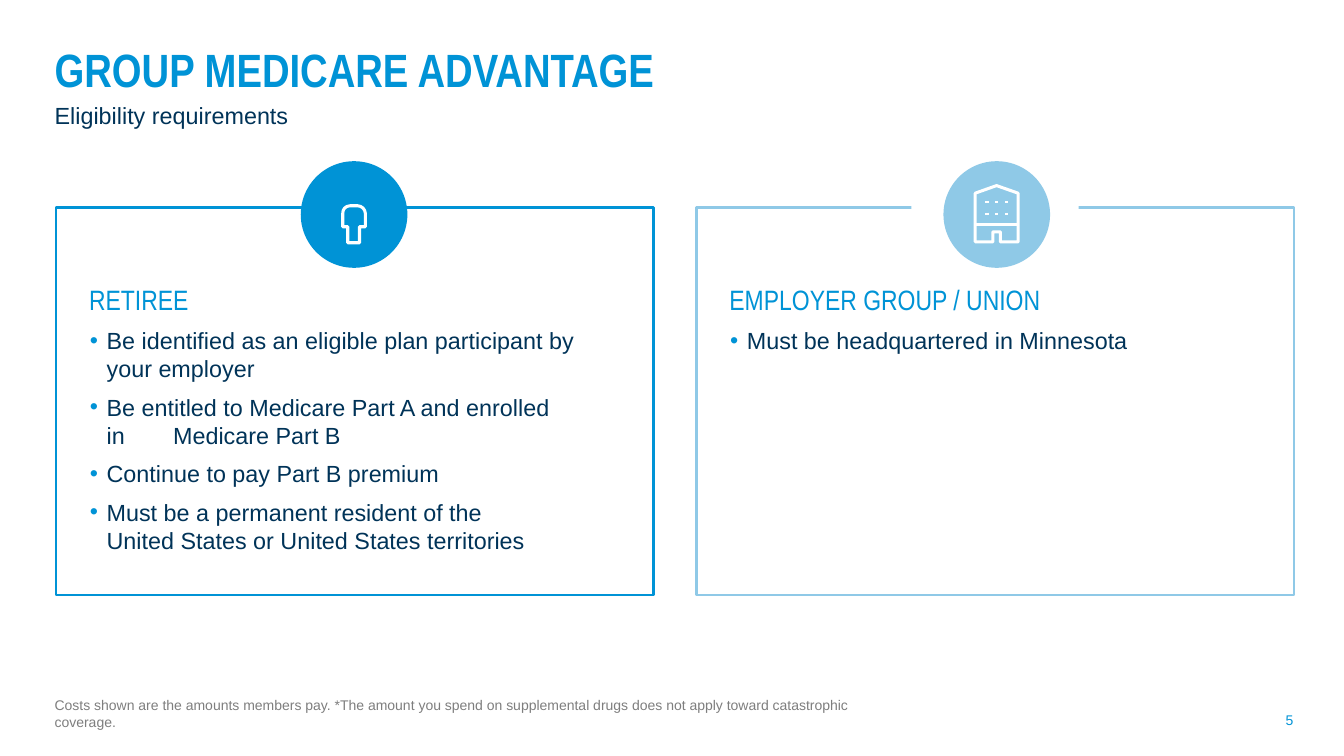
from pptx import Presentation
from pptx.dml.color import RGBColor
from pptx.enum.shapes import MSO_CONNECTOR, MSO_SHAPE
from pptx.enum.text import MSO_ANCHOR, MSO_AUTO_SIZE, PP_ALIGN
from pptx.oxml import parse_xml
from pptx.oxml.ns import nsdecls
from pptx.util import Pt

BLUE, LIGHT, NAVY, GREY, WHITE = "0093D6", "8FC9E7", "003358", "7E7E7E", "FFFFFF"

prs = Presentation()
prs.slide_width, prs.slide_height = Pt(1152), Pt(648)
s = prs.slides.add_slide(prs.slide_layouts[5])


def paint(sp, fill=None, line=None, width=2):
    """Set fill and outline, with none where no colour is given."""
    sp.shadow.inherit = False
    for part, color in ((sp.fill, fill), (sp.line.fill, line)):
        if color:
            part.solid()
            part.fore_color.rgb = RGBColor.from_string(color)
        else:
            part.background()
    if line:
        sp.line.width = Pt(width)


def write(sp, inset, lines):
    """Fill a shape with (text, font, size, colour, space before, bulleted) lines."""
    tf = sp.text_frame
    tf.word_wrap = True
    tf.auto_size = MSO_AUTO_SIZE.NONE
    tf.vertical_anchor = MSO_ANCHOR.TOP
    tf.margin_left = tf.margin_right = tf.margin_bottom = 0
    tf.margin_top = Pt(inset)
    for i, (text, font, size, color, before, bulleted) in enumerate(lines):
        p = tf.add_paragraph() if i else tf.paragraphs[0]
        p.text = text
        p.alignment = PP_ALIGN.LEFT
        p.space_before = Pt(before)
        if bulleted:
            pPr = p._p.get_or_add_pPr()
            pPr.set("marL", str(Pt(15)))
            pPr.set("indent", str(-Pt(14.4)))
            for xml in (
                f'<a:buClr {nsdecls("a")}><a:srgbClr val="{BLUE}"/></a:buClr>',
                f'<a:buFont {nsdecls("a")} typeface="Arial"/>',
                f'<a:buChar {nsdecls("a")} char="•"/>',
                f'<a:tabLst {nsdecls("a")}><a:tab pos="{Pt(72)}" algn="l"/></a:tabLst>',
            ):
                pPr.append(parse_xml(xml))
        for r in p.runs:
            r.font.name, r.font.size = font, Pt(size)
            r.font.color.rgb = RGBColor.from_string(color)


# Title and subtitle
title = s.shapes.title
title.left, title.top, title.width, title.height = Pt(46.8), Pt(27.4), Pt(1064), Pt(85)
write(title, 8, [
    ("GROUP MEDICARE ADVANTAGE", "Arial Narrow", 40, BLUE, 0, False),
    ("Eligibility requirements", "Arial", 20, NAVY, 3.7, False),
])
title.text_frame.paragraphs[0].runs[0].font.bold = True

# Requirement cards
cards = [
    (48.2, BLUE, "RETIREE", [
        "Be identified as an eligible plan participant by\vyour employer",
        "Be entitled to Medicare Part A and enrolled\vin\tMedicare Part B",
        "Continue to pay Part B premium",
        "Must be a permanent resident of the\vUnited States or United States territories",
    ]),
    (597, LIGHT, "EMPLOYER GROUP / UNION", ["Must be headquartered in Minnesota"]),
]
for left, color, heading, items in cards:
    frame = s.shapes.add_shape(MSO_SHAPE.RECTANGLE, Pt(left), Pt(178), Pt(512), Pt(332))
    paint(frame, line=color)
    box = s.shapes.add_textbox(Pt(left + 28.2), Pt(230.4), Pt(430), Pt(250))
    write(box, 11.5, [(heading, "Arial Narrow", 24, BLUE, 0, False)]
          + [(item, "Arial", 20, NAVY, 9, True) for item in items])

# Footnote and page number
footnote = ("Costs shown are the amounts members pay. *The amount you spend on "
            "supplemental drugs does not apply toward catastrophic coverage.")
for left, top, width, height, text, color in (
    (46.8, 596.2, 686, 31, footnote, GREY),
    (1102, 609.1, 14, 17, "5", BLUE),
):
    box = s.shapes.add_textbox(Pt(left), Pt(top), Pt(width), Pt(height))
    write(box, 1, [(text, "Arial", 12, color, 0, False)])

# Icon badges
gap = s.shapes.add_shape(MSO_SHAPE.RECTANGLE, Pt(781.2), Pt(160), Pt(143.3), Pt(60.5))
paint(gap, fill=WHITE)
for left, color in ((257.8, BLUE), (808.7, LIGHT)):
    badge = s.shapes.add_shape(MSO_SHAPE.OVAL, Pt(left), Pt(138.2), Pt(91.4), Pt(91.4))
    paint(badge, fill=color)

# Outlines of the person and the building
person = [(308.2, 208.1), (298.1, 208.1), (298.1, 194.4), (293.8, 194.4), (293.8, 182.9),
          (294.2, 180.4), (295.4, 178.4), (297.4, 177), (300, 176.4), (306.7, 176.4),
          (309.2, 177), (311.2, 178.4), (312.6, 180.4), (313.2, 182.9), (313.2, 194.4),
          (308.2, 194.4)]
building = [(854.2, 159.1), (835.9, 165.6), (835.9, 207.4), (851, 207.4), (851, 198.7),
            (857.5, 198.7), (857.5, 207.4), (872.6, 207.4), (872.6, 165.6)]
for outline in (person, building):
    points = [(Pt(x), Pt(y)) for x, y in outline]
    builder = s.shapes.build_freeform(*points[0])
    builder.add_line_segments(points[1:], close=True)
    paint(builder.convert_to_shape(), line=WHITE, width=2.6)

# Building floor line and windows
strokes = [(835.9, 192.2, 872.6, 192.2)]
strokes += [(x, y, x, y + 1.7) for y in (172.1, 182.2) for x in (846, 854.2, 862.5)]
for x1, y1, x2, y2 in strokes:
    c = s.shapes.add_connector(MSO_CONNECTOR.STRAIGHT, Pt(x1), Pt(y1), Pt(x2), Pt(y2))
    c.line.color.rgb = RGBColor.from_string(WHITE)
    c.line.width = Pt(2.6)
    c._element.spPr.append(parse_xml(f'<a:effectLst {nsdecls("a")}/>'))

prs.save("out.pptx")
